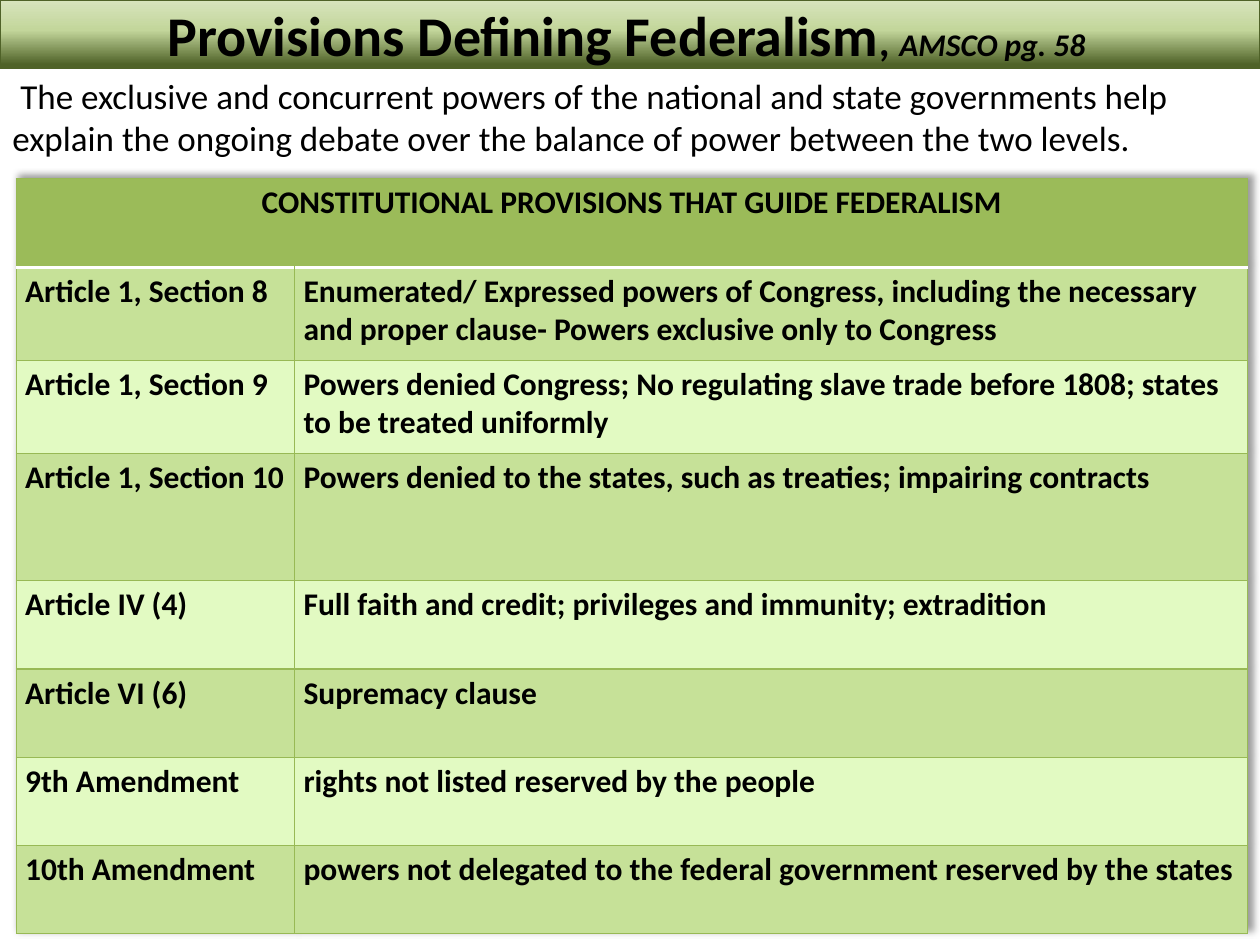
"""Build the slide on constitutional provisions that define federalism."""
from copy import deepcopy

from pptx import Presentation
from pptx.dml.color import RGBColor
from pptx.enum.text import MSO_ANCHOR, PP_ALIGN
from pptx.oxml import parse_xml
from pptx.oxml.ns import nsdecls
from pptx.util import Inches, Pt

CENTER, MIDDLE = PP_ALIGN.CENTER, MSO_ANCHOR.MIDDLE
FONT = "Calibri"
BLACK = RGBColor(0x00, 0x00, 0x00)
WHITE = RGBColor(0xFF, 0xFF, 0xFF)
PALE = RGBColor(0xD7, 0xE4, 0xBD)
SOFT = RGBColor(0xC3, 0xD6, 0x9B)
DARK = RGBColor(0x4F, 0x62, 0x28)
HEADER = RGBColor(0x9B, 0xBB, 0x59)
BORDER = RGBColor(0x98, 0xB9, 0x55)
BANDS = (RGBColor(0xC6, 0xE1, 0x98), RGBColor(0xE2, 0xFA, 0xC2))

HEADING = "CONSTITUTIONAL PROVISIONS THAT GUIDE FEDERALISM"
PROVISIONS = [
    ("Article 1, Section 8", "Enumerated/ Expressed powers of Congress, including the necessary "
     "and proper clause- Powers exclusive only to Congress"),
    ("Article 1, Section 9", "Powers denied Congress; No regulating slave trade before 1808; "
     "states to be treated uniformly"),
    ("Article 1, Section 10", "Powers denied to the states, such as treaties; impairing contracts"),
    ("Article IV (4)", "Full faith and credit; privileges and immunity; extradition"),
    ("Article VI (6)", "Supremacy clause"),
    ("9th Amendment", "rights not listed reserved by the people"),
    ("10th Amendment", "powers not delegated to the federal government reserved by the states"),
]
COLS = (2.21, 7.56)
ROWS = (0.7, 0.74, 0.74, 1.01) + (0.7,) * 4


def style(r, size, bold=False, italic=False):
    f = r.font
    f.name, f.size, f.bold, f.italic = FONT, Pt(size), bold, italic
    f.color.rgb = BLACK


def border(cell, sides):
    tcPr = cell._tc.get_or_add_tcPr()
    for i, (side, (color, width)) in enumerate(sides.items()):
        tcPr.insert(i, parse_xml(
            f'<a:ln{side} {nsdecls("a")} w="{Pt(width)}"><a:solidFill>'
            f'<a:srgbClr val="{color}"/></a:solidFill></a:ln{side}>'))


prs = Presentation()
prs.slide_width, prs.slide_height = Inches(10), Inches(7.5)
s = prs.slides.add_slide(prs.slide_layouts[5])

title = s.shapes.title
title.left, title.top, title.width, title.height = 0, 0, prs.slide_width, Inches(0.54)
title.line.color.rgb = DARK
title.line.width = Pt(0.75)
title.fill.gradient()
title.fill.gradient_angle = 270
gs_list = title._element.spPr.xpath(".//a:gsLst")[0]
gs_list.append(deepcopy(gs_list[-1]))
for stop, color, position in zip(title.fill.gradient_stops, (PALE, SOFT, DARK), (0, 0.44, 0.95)):
    stop.color.rgb = color
    stop.position = position
tf = title.text_frame
tf.margin_left = tf.margin_right = tf.margin_top = tf.margin_bottom = 0
tf.vertical_anchor = MIDDLE
p = tf.paragraphs[0]
p.alignment = CENTER
for text, size, italic in (("Provisions Defining Federalism", 32, False),
                           (", ", 24, False), ("AMSCO pg. 58 ", 18, True)):
    r = p.add_run()
    r.text = text
    style(r, size, True, italic)

tf = s.shapes.add_textbox(0, Inches(0.54), Inches(9.89), Inches(0.77)).text_frame
tf.word_wrap = True
tf.text = (" The exclusive and concurrent powers of the national and state governments help "
           "explain the ongoing debate over the balance of power between the two levels.")
style(tf.paragraphs[0].runs[0], 20)

table = s.shapes.add_table(len(ROWS), len(COLS), Inches(0.13), Inches(1.42),
                           Inches(sum(COLS)), Inches(sum(ROWS))).table
table._tbl.tblPr.insert(0, parse_xml(
    f'<a:effectLst {nsdecls("a")}><a:outerShdw blurRad="50800" dist="38100" dir="18900000" '
    'algn="bl" rotWithShape="0"><a:srgbClr val="000000"><a:alpha val="40000"/></a:srgbClr>'
    '</a:outerShdw></a:effectLst>'))
for column, width in zip(table.columns, COLS):
    column.width = Inches(width)
for row, height in zip(table.rows, ROWS):
    row.height = Inches(height)
table.cell(0, 0).merge(table.cell(0, 1))

thin, thick = (BORDER, 0.75), (WHITE, 2)
for i, texts in enumerate([(HEADING, "")] + PROVISIONS):
    for j, text in enumerate(texts):
        cell = table.cell(i, j)
        cell.margin_left = cell.margin_right = Inches(0.07)
        cell.margin_top = cell.margin_bottom = Inches(0.04)
        cell.fill.solid()
        cell.fill.fore_color.rgb = BANDS[(i - 1) % 2] if i else HEADER
        border(cell, {"L": thin, "R": thin, "T": thick if i == 1 else thin,
                      "B": thin if i else thick})
        if text:
            cell.text_frame.text = text
            p = cell.text_frame.paragraphs[0]
            style(p.runs[0], 18, True)
            if i == 0:
                p.alignment = CENTER

prs.save("out.pptx")
